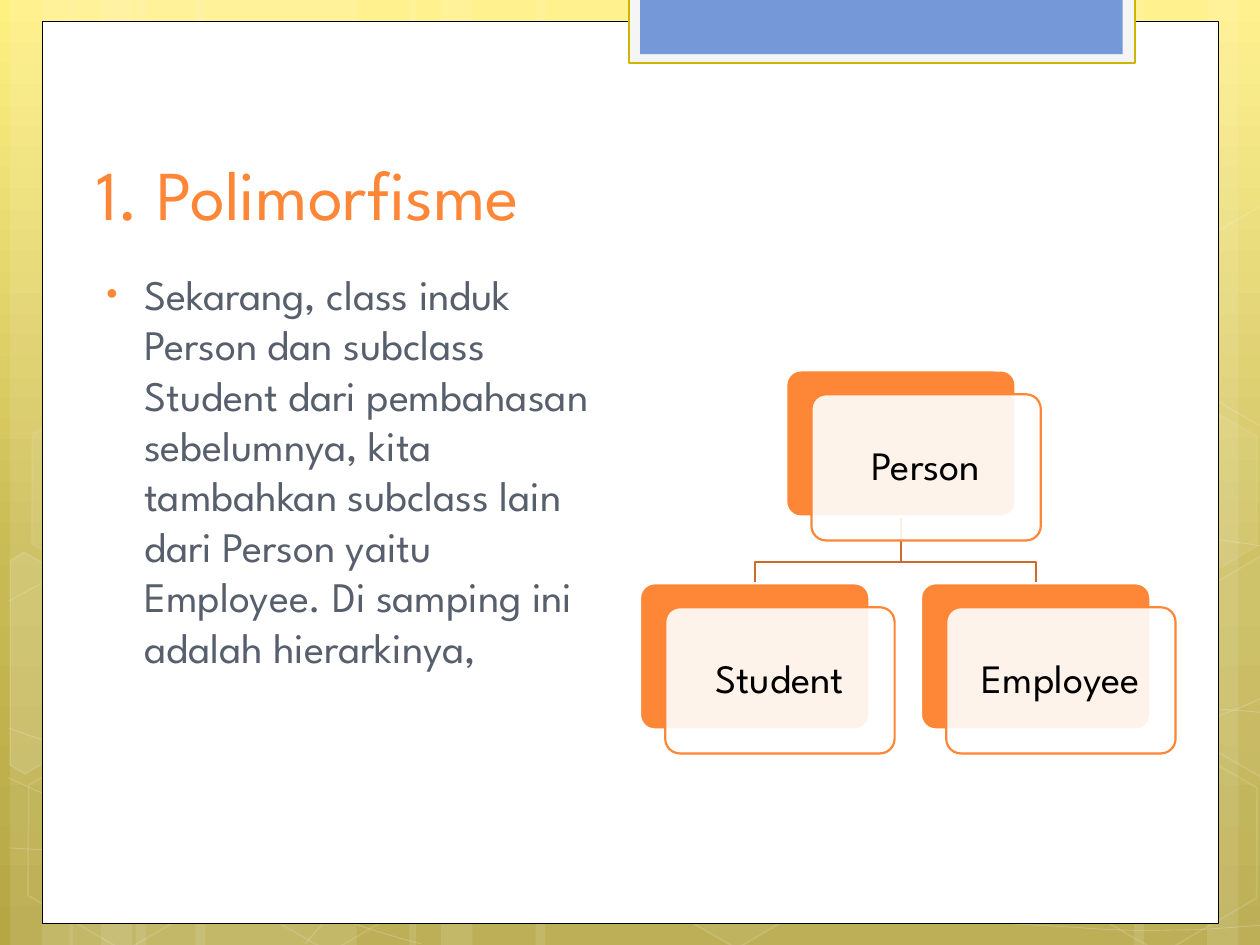
from copy import deepcopy
from math import cos, radians, sin

from lxml.etree import SubElement
from pptx import Presentation
from pptx.dml.color import RGBColor
from pptx.enum.shapes import MSO_SHAPE as SHAPE
from pptx.enum.text import MSO_ANCHOR as ANCHOR, PP_ALIGN as ALIGN
from pptx.oxml.ns import qn
from pptx.util import Inches, Pt

FONT = "League Spartan"
ORANGE, WHITE = "FE8637", "FFFFFF"
CARD_W, CARD_H, CARD_SHIFT = 1.82, 1.16, (0.2, 0.19)
TILT = 30
MARGIN = 2 / 3

# Left and width of the pale vertical bands
BANDS = [(1.08, 1.75), (0.08, 0.5), (0.33, 0.83), (1.55, 1.75), (0.55, 0.5),
         (0.8, 0.83), (7.33, 1.75), (9.58, 0.5), (9, 0.83), (4.25, 3.08),
         (3.25, 0.5), (3.5, 0.83)]

# Cubic curves: a start point, then two controls and an end point per segment
CURVES = [
    [(0.07, 6.73), (0.61, 6.76), (1.15, 6.79), (1.9, 6.78), (2.65, 6.77),
     (3.58, 6.75), (4.58, 6.65), (5.58, 6.55), (7, 6.36), (7.92, 6.17),
     (8.83, 5.98), (9.77, 5.68), (10.07, 5.51)],
    [(0.07, 4.77), (0.36, 4.61), (0.65, 4.46), (1.21, 4.31), (1.78, 4.16),
     (2.59, 3.94), (3.47, 3.87), (4.36, 3.8), (5.44, 3.79), (6.54, 3.87),
     (7.64, 3.95), (9.47, 4.26), (10.07, 4.34)],
    [(0.06, 6.17), (1.27, 6.72), (2.47, 7.27), (3.34, 7.49)],
    [(0.07, 5.78), (0.38, 5.89), (0.7, 6), (1.28, 6.16), (1.86, 6.31),
     (2.73, 6.56), (3.57, 6.73), (4.4, 6.9), (5.45, 7.08), (6.28, 7.18),
     (7.11, 7.29), (8, 7.33), (8.53, 7.36), (9.05, 7.4), (9.19, 7.38),
     (9.45, 7.38), (9.71, 7.37), (9.89, 7.35), (10.07, 7.34)],
    [(2.42, 7.49), (2.6, 7.29), (2.78, 7.09), (3.02, 6.91), (3.26, 6.73),
     (3.6, 6.53), (3.88, 6.39), (4.16, 6.25), (4.33, 6.19), (4.7, 6.09),
     (5.06, 5.99), (5.73, 5.85), (6.08, 5.78), (6.44, 5.71), (6.49, 5.71),
     (6.8, 5.69), (7.11, 5.66), (7.6, 5.63), (7.94, 5.62), (8.29, 5.61),
     (8.86, 5.62), (8.86, 5.62), (9.08, 5.62), (9.31, 5.62), (9.53, 5.62),
     (9.71, 5.63), (9.88, 5.64), (10.06, 5.66)],
]

# Left, top, fill opacity and line opacity of the whole hexagons
HEXAGONS = [(3.34, 0.36, 4, 8), (4.97, 5.89, 6, 12), (0.11, 5.91, None, 12),
            (0.14, 3.12, 7, 8), (1.74, 5.92, None, 12), (8.34, 5.93, None, 12),
            (8.34, 3.14, 7, 8)]

# Hexagons cut by the slide edge: centre, corner points and fill opacity
CUT_HEXAGONS = [
    ((0.36, 5.35), [(0.08, 4.45), (0.19, 4.38), (0.96, 4.82), (0.95, 5.7),
                    (0.2, 6.14), (0.08, 6.07)], 10),
    ((9.85, 5.2), [(9.26, 4.85), (10.01, 4.41), (10.09, 4.46), (10.09, 6.13),
                   (10.02, 6.17), (9.26, 5.73)], 4),
    ((9.85, 2.41), [(9.26, 2.07), (10.01, 1.63), (10.1, 1.68), (10.09, 3.35),
                    (10.02, 3.39), (9.26, 2.95)], None),
]


def rgb(value):
    return RGBColor.from_string(value)


def set_opacity(parent, percent):
    color = parent.find(qn("a:solidFill")).find(qn("a:srgbClr"))
    SubElement(color, qn("a:alpha")).set("val", str(percent * 1000))


def style(sp, fill=None, line=None, width=1.25, fill_opacity=100, line_opacity=100):
    sp.shadow.inherit = False
    sp_pr = sp._element.spPr
    if fill and fill_opacity:
        sp.fill.solid()
        sp.fill.fore_color.rgb = rgb(fill)
        if fill_opacity < 100:
            set_opacity(sp_pr, fill_opacity)
    else:
        sp.fill.background()
    if line:
        sp.line.color.rgb = rgb(line)
        sp.line.width = Pt(width)
        if line_opacity < 100:
            set_opacity(sp_pr.find(qn("a:ln")), line_opacity)
    else:
        sp.line.fill.background()
    return sp


def add_box(s, kind, x, y, w, h, **look):
    sp = s.shapes.add_shape(kind, Inches(x), Inches(y), Inches(w), Inches(h))
    return style(sp, **look)


def add_outline(s, points, close=False, **look):
    points = [(Inches(x), Inches(y)) for x, y in points]
    builder = s.shapes.build_freeform(*points[0], scale=1.0)
    builder.add_line_segments(points[1:], close=close)
    return style(builder.convert_to_shape(), **look)


def add_curve(s, knots, **look):
    sp = add_outline(s, knots[::3], **look)
    segments = list(sp._element.iter(qn("a:lnTo")))
    for i, segment in enumerate(segments):
        segment.tag = qn("a:cubicBezTo")
        for n, (x, y) in enumerate(knots[3 * i + 1:3 * i + 3]):
            pt = deepcopy(segment[-1])
            pt.set("x", str(Inches(x) - sp.left))
            pt.set("y", str(Inches(y) - sp.top))
            segment.insert(n, pt)


def turn_back(point, centre):
    (x, y), (cx, cy), a = point, centre, radians(TILT)
    dx, dy = x - cx, y - cy
    return cx + dx * cos(a) + dy * sin(a), cy - dx * sin(a) + dy * cos(a)


def add_run(p, text, size, color):
    r = p.add_run()
    r.text = text
    r.font.name = FONT
    r.font.size = Pt(size)
    r.font.color.rgb = rgb(color)


def set_background(s):
    fill = s.background.fill
    fill.gradient()
    fill.gradient_angle = 270
    stops = next(s._element.iter(qn("a:gsLst")))
    stops.append(deepcopy(stops[0]))
    for stop, (position, color) in zip(
            fill.gradient_stops, [(0, "FFF082"), (0.62, "C7B953"), (1, "B6A744")]):
        stop.position = position
        stop.color.rgb = rgb(color)


def add_backdrop(s):
    for x, w in BANDS:
        add_box(s, SHAPE.RECTANGLE, x, 0, w, 7.5, fill=WHITE, fill_opacity=10)
    for knots in CURVES:
        add_curve(s, knots, line=WHITE, width=0.5, line_opacity=20)
    for x, y, opacity, line_opacity in HEXAGONS:
        sp = add_box(s, SHAPE.HEXAGON, x, y, 1.75, 1.52, fill=WHITE, fill_opacity=opacity,
                     line=WHITE, width=1, line_opacity=line_opacity)
        sp.adjustments[0] = 0.285
        sp.rotation = TILT
    for centre, corners, opacity in CUT_HEXAGONS:
        sp = add_outline(s, [turn_back(c, centre) for c in corners], close=True, fill=WHITE,
                         fill_opacity=opacity, line=WHITE, width=1, line_opacity=12)
        sp.rotation = TILT
    # White page with the tab at its top
    add_box(s, SHAPE.RECTANGLE, MARGIN / 2, MARGIN / 4, 10 - MARGIN, 7.5 - MARGIN / 2,
            fill=WHITE, line="000000", width=0.5)
    add_box(s, SHAPE.RECTANGLE, 4.99, -0.01, 4.02, 0.51, fill="F5F5F5", line="CEB500")
    add_box(s, SHAPE.RECTANGLE, 5.08, 0, 3.83, 0.43, fill="7598D9")


def add_title(s, text):
    sp = s.shapes.title
    sp.left, sp.top, sp.width, sp.height = map(Inches, (MARGIN, 0.58, 8.67, 1.33))
    s.shapes._spTree.append(sp._element)  # bring in front of the page
    tf = sp.text_frame
    tf.vertical_anchor = ANCHOR.BOTTOM
    p = tf.paragraphs[0]
    p.alignment = ALIGN.LEFT
    add_run(p, text, 40, ORANGE)


def add_bullet_text(s, text):
    tf = s.shapes.add_textbox(*map(Inches, (MARGIN, 2.08, 4.21, 4.75))).text_frame
    tf.word_wrap = True
    p = tf.paragraphs[0]
    p.space_before = Pt(4.8)
    p_pr = p._p.get_or_add_pPr()
    p_pr.set("marL", str(Inches(0.38)))
    p_pr.set("indent", str(Inches(-0.3)))
    SubElement(SubElement(p_pr, qn("a:buClr")), qn("a:srgbClr")).set("val", ORANGE)
    for tag, key, value in [("a:buSzPct", "val", "76000"), ("a:buFont", "typeface", "Arial"),
                            ("a:buChar", "char", "•")]:
        SubElement(p_pr, qn(tag)).set(key, value)
    add_run(p, text, 24, "575F6D")


def add_card(s, text, x, y):
    dx, dy = CARD_SHIFT
    back = add_box(s, SHAPE.ROUNDED_RECTANGLE, x, y, CARD_W, CARD_H, fill=ORANGE, line=WHITE)
    front = add_box(s, SHAPE.ROUNDED_RECTANGLE, x + dx, y + dy, CARD_W, CARD_H,
                    fill=WHITE, fill_opacity=90, line=ORANGE)
    back.adjustments[0] = front.adjustments[0] = 0.1
    tf = front.text_frame
    tf.word_wrap = True
    tf.vertical_anchor = ANCHOR.MIDDLE
    tf.margin_left = tf.margin_right = tf.margin_top = tf.margin_bottom = Inches(0.1)
    p = tf.paragraphs[0]
    p.alignment = ALIGN.CENTER
    p.line_spacing = 0.9
    add_run(p, text, 23, "000000")


def add_hierarchy(s, parent, children):
    (_, x, y), bend = parent, 4.46
    middle, bottom = x + CARD_W / 2, y + CARD_H
    for _, child_x, child_y in reversed(children):
        end = child_x + CARD_W / 2
        add_outline(s, [(middle, bottom), (middle, bend), (end, bend), (end, child_y)],
                    line="CB6B2C")
    for card in [parent, *children]:
        add_card(s, *card)


def main():
    prs = Presentation()
    prs.slide_width, prs.slide_height = Inches(10), Inches(7.5)
    s = prs.slides.add_slide(prs.slide_layouts[5])
    set_background(s)
    add_backdrop(s)
    add_title(s, "1. Polimorfisme")
    add_bullet_text(s, "Sekarang, class induk Person dan subclass Student dari pembahasan "
                       "sebelumnya, kita tambahkan subclass lain dari Person yaitu "
                       "Employee. Di samping ini adalah hierarkinya,")
    add_hierarchy(s, ("Person", 6.24, 2.94),
                  [("Student", 5.08, 4.63), ("Employee", 7.31, 4.63)])
    prs.save("out.pptx")


if __name__ == "__main__":
    main()
